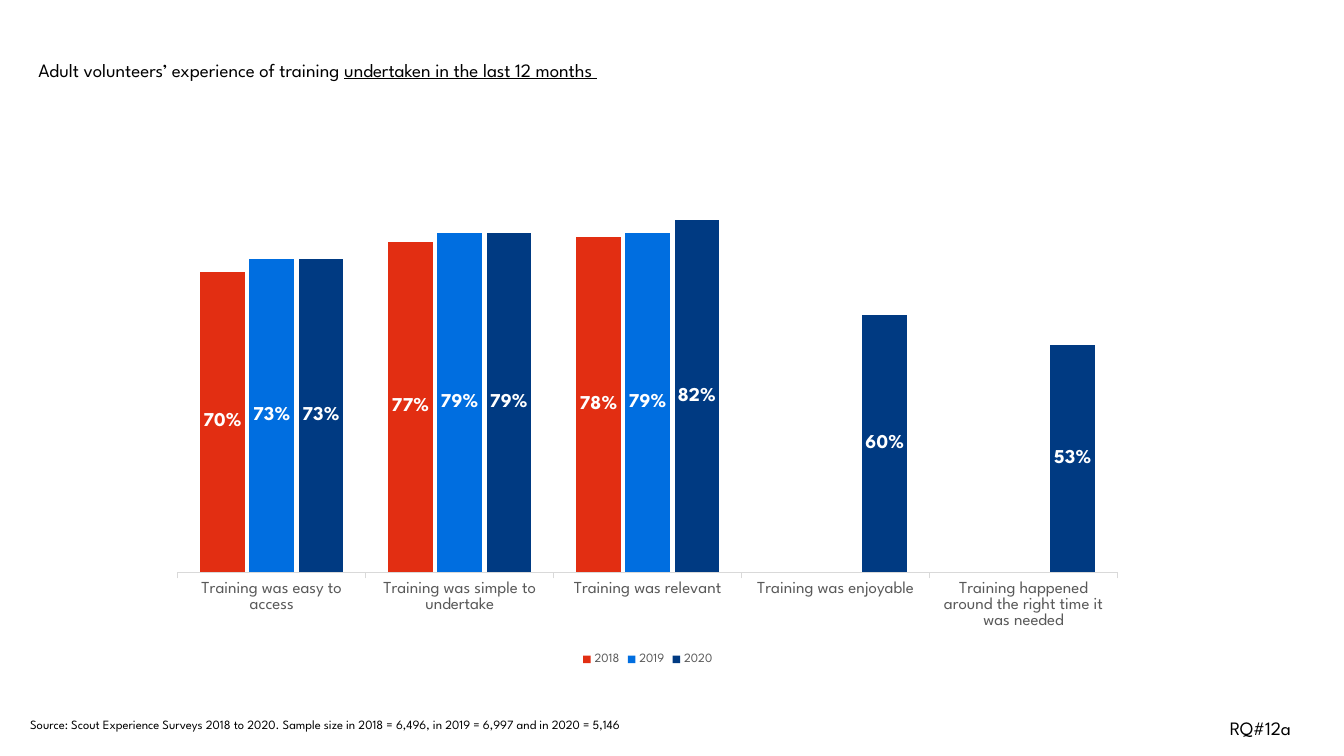
import pptx
import pptx.util
import pptx.chart.data
import pptx.dml.color
import pptx.enum.chart
import pptx.enum.text
import pptx.oxml

RGB = pptx.dml.color.RGBColor
Pt = pptx.util.Pt
FONT = "League Spartan"
BLACK = RGB(0x00, 0x00, 0x00)
WHITE = RGB(0xFF, 0xFF, 0xFF)
GREY = RGB(0x59, 0x59, 0x59)
PALE = RGB(0xD9, 0xD9, 0xD9)
RED = RGB(0xE2, 0x2E, 0x12)
BLUE = RGB(0x00, 0x6E, 0xE0)
NAVY = RGB(0x00, 0x3A, 0x82)

# Text runs: wording and whether it is underlined
TITLE = [
    ("Adult volunteers’ experience of training ", False),
    ("undertaken in the last 12 months ", True),
]
CODE = [("RQ#12a", False)]
SOURCE = [
    ("Source: Scout Experience Surveys 2018 to 2020. Sample size in "
     "2018 = 6,496, in 2019 = 6,997 and in 2020 = 5,146", False),
]
TOPICS = [
    "Training was easy to access",
    "Training was simple to undertake",
    "Training was relevant",
    "Training was enjoyable",
    "Training happened around the right time it was needed",
]
YEARS = [
    ("2018", RED, (0.70, 0.77, 0.78, None, None)),
    ("2019", BLUE, (0.73, 0.79, 0.79, None, None)),
    ("2020", NAVY, (0.73, 0.79, 0.82, 0.60, 0.53)),
]

# Left, top, width, height in inches
TITLE_BOX = (0.38, 0.58, 6.29, 0.45)
CHART_BOX = (1.57, 1.31, 9.71, 5.33)
SOURCE_BOX = (0.2, 7.06, 7.15, 0.25)
CODE_BOX = (12.1, 7.06, 1.01, 0.33)
# Plot area as shares of the chart
PLOT = {"x": 0.02, "y": 0.02, "w": 0.96, "h": 0.8}


def inches(box):
    return [pptx.util.Inches(n) for n in box]


def style(font, size, color, bold=False):
    font.name, font.size, font.bold = FONT, Pt(size), bold
    font.color.rgb = color


def write(frame, runs, size):
    frame.word_wrap = True
    frame.vertical_anchor = pptx.enum.text.MSO_ANCHOR.TOP
    para = frame.paragraphs[0]
    para.alignment = pptx.enum.text.PP_ALIGN.LEFT
    for text, under in runs:
        run = para.add_run()
        run.text = text
        style(run.font, size, BLACK)
        if under:
            run.font.underline = True


def add_title(slide):
    title = slide.shapes.title
    title.left, title.top, title.width, title.height = inches(TITLE_BOX)
    frame = title.text_frame
    frame.margin_left = frame.margin_right = 0
    frame.margin_top = frame.margin_bottom = 0
    write(frame, TITLE, 13.5)


def place_plot(chart):
    """Fix the inner plot area at the shares in PLOT."""
    area = chart.element.chart.plotArea
    for old in area.xpath("c:layout"):
        area.remove(old)
    modes = '<c:xMode val="edge"/><c:yMode val="edge"/>'
    sizes = "".join(f'<c:{k} val="{v}"/>' for k, v in PLOT.items())
    names = pptx.oxml.ns.nsdecls("c")
    area.insert(0, pptx.oxml.parse_xml(
        f'<c:layout {names}><c:manualLayout><c:layoutTarget val="inner"/>'
        f"{modes}{sizes}</c:manualLayout></c:layout>"))


def add_chart(slide):
    kinds = pptx.enum.chart
    data = pptx.chart.data.CategoryChartData(number_format="0%")
    data.categories = TOPICS
    for year, _, shares in YEARS:
        data.add_series(year, shares)
    chart = slide.shapes.add_chart(
        kinds.XL_CHART_TYPE.COLUMN_CLUSTERED, *inches(CHART_BOX), data).chart
    chart.has_title = False
    style(chart.font, 10, BLACK)

    chart.has_legend = True
    chart.legend.position = kinds.XL_LEGEND_POSITION.BOTTOM
    chart.legend.include_in_layout = False
    style(chart.legend.font, 9, GREY)

    axis = chart.category_axis
    axis.major_tick_mark = kinds.XL_TICK_MARK.OUTSIDE
    axis.format.line.color.rgb = PALE
    axis.format.line.width = Pt(0.75)
    style(axis.tick_labels.font, 12, GREY)

    scale = chart.value_axis
    scale.minimum_scale, scale.maximum_scale = 0, 1
    scale.has_major_gridlines = False
    scale.visible = False

    plot = chart.plots[0]
    plot.gap_width, plot.overlap = 100, -10
    plot.vary_by_categories = False
    for series, (_, color, _) in zip(plot.series, YEARS):
        series.format.fill.solid()
        series.format.fill.fore_color.rgb = color
        labels = series.data_labels
        labels.show_value = True
        labels.number_format = "0%"
        labels.number_format_is_linked = False
        labels.position = kinds.XL_LABEL_POSITION.CENTER
        style(labels.font, 14, WHITE, bold=True)
    place_plot(chart)


def main():
    deck = pptx.Presentation()
    deck.slide_width, deck.slide_height = inches((13.33, 7.5))
    slide = deck.slides.add_slide(deck.slide_layouts.get_by_name("Title Only"))
    add_title(slide)
    add_chart(slide)
    for box, runs, size in ((CODE_BOX, CODE, 13.5), (SOURCE_BOX, SOURCE, 9)):
        write(slide.shapes.add_textbox(*inches(box)).text_frame, runs, size)
    deck.save("out.pptx")


if __name__ == "__main__":
    main()
